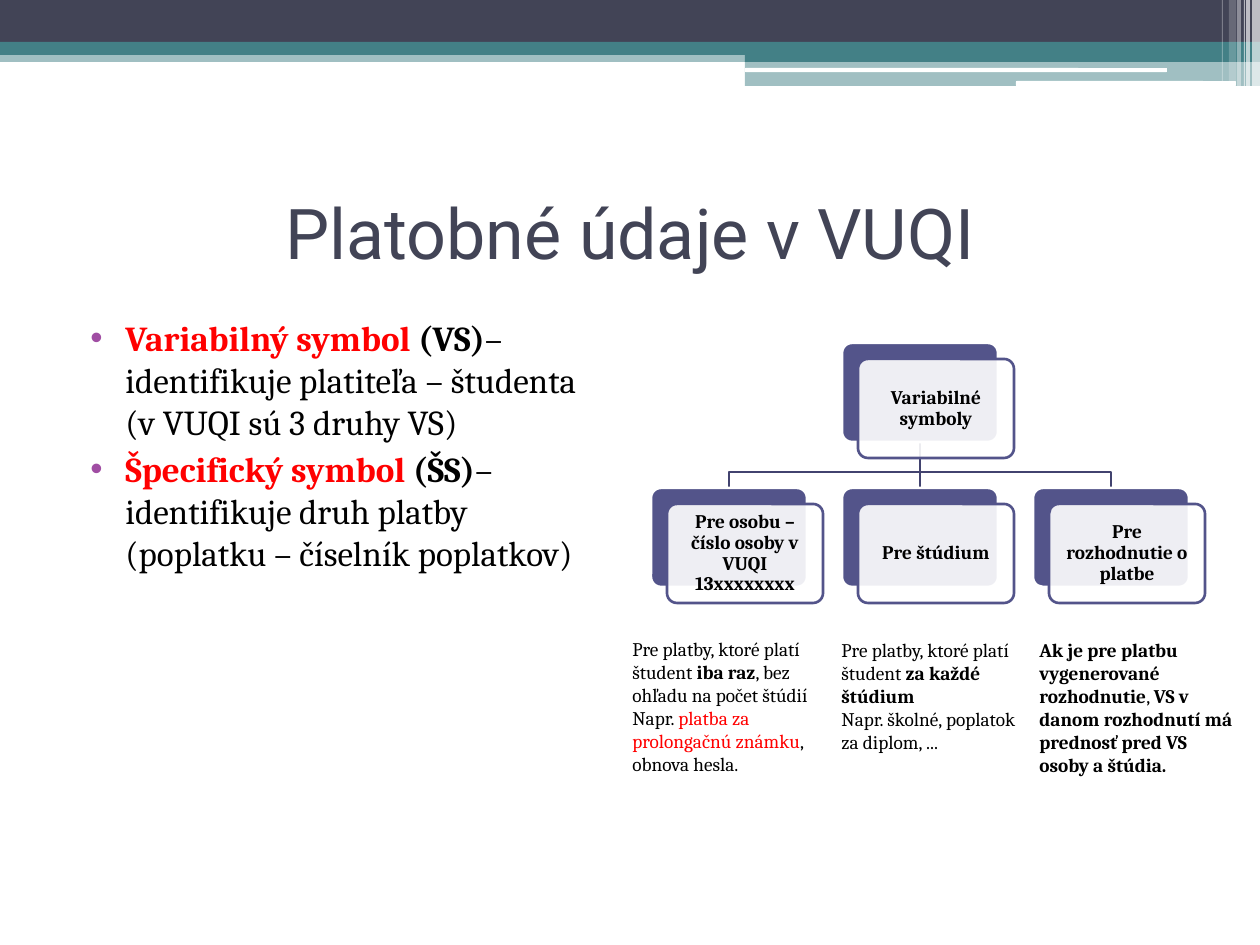
from dataclasses import dataclass

from lxml.etree import SubElement
from pptx import Presentation
from pptx.dml.color import RGBColor
from pptx.enum.shapes import MSO_CONNECTOR as Link, MSO_SHAPE as Kind
from pptx.enum.text import MSO_ANCHOR as Anchor, PP_ALIGN as Align
from pptx.oxml.ns import qn
from pptx.util import Emu, Pt

INK = {"navy": "424456", "teal": "438086", "white": "FFFFFF", "black": "000000",
       "red": "FF0000", "card": "53548A", "link": "42436F", "dot": "A04DA3"}
SERIF = "Cambria"


@dataclass
class Run:
    text: str
    bold: bool = False
    ink: str = "black"


@dataclass
class Band:
    x: int
    y: int
    w: int
    h: int
    ink: str = "white"
    alpha: int = 100
    kind: Kind = Kind.RECTANGLE


@dataclass
class Note:
    x: int
    y: int
    h: int
    paras: list[list[Run]]


def px(n: int) -> Emu:
    return Emu(round(n * 914400 / 126))


def rgb(ink: str) -> RGBColor:
    return RGBColor.from_string(INK[ink])


def draw(tree, band: Band, line: str = ""):
    """Add a filled shape, outlined only when a line colour is given."""
    box = tree.add_shape(band.kind, *map(px, (band.x, band.y, band.w, band.h)))
    box.shadow.inherit = False
    box.fill.solid()
    box.fill.fore_color.rgb = rgb(band.ink)
    if band.alpha < 100:
        clr = box.fill._xPr.find(".//" + qn("a:srgbClr"))
        SubElement(clr, qn("a:alpha"), val=str(band.alpha * 1000))
    if line:
        stroke(box, line)
    else:
        box.line.fill.background()
    return box


def stroke(item, ink: str) -> None:
    item.line.color.rgb = rgb(ink)
    item.line.width = Pt(1.5)


def write(para, runs: list[Run], size: int, font: str = SERIF) -> None:
    for part in runs:
        run = para.add_run()
        run.text = part.text
        run.font.size = Pt(size)
        run.font.name = font
        run.font.bold = part.bold
        run.font.color.rgb = rgb(part.ink)


def bullet(para) -> None:
    ppr = para._p.get_or_add_pPr()
    ppr.set("marL", str(px(50)))
    ppr.set("indent", str(-px(35)))
    tint = SubElement(ppr, qn("a:buClr"))
    SubElement(tint, qn("a:srgbClr"), val=INK["dot"])
    SubElement(ppr, qn("a:buFont"), typeface="Arial")
    SubElement(ppr, qn("a:buChar"), char="•")


def block(tree, x: int, y: int, w: int, h: int, paras: list[list[Run]],
          size: int, dots: bool = False) -> None:
    frame = tree.add_textbox(*map(px, (x, y, w, h))).text_frame
    frame.word_wrap = True
    for i, runs in enumerate(paras):
        para = frame.add_paragraph() if i else frame.paragraphs[0]
        if dots:
            para.space_before = Pt(3)
            bullet(para)
        write(para, runs, size)


CARD_W, CARD_H = 156, 99
ROOT_X, ROOT_Y, KID_Y = 842, 343, 488
STEP, BEND_Y = 191, 472


def card(tree, x: int, y: int, text: str):
    """Draw a solid card with a labelled one over it; return the solid one."""
    back = draw(tree, Band(x, y, CARD_W, CARD_H, "card", 100, Kind.ROUNDED_RECTANGLE), "white")
    front = draw(tree, Band(x + 16, y + 16, CARD_W, CARD_H, "white", 90,
                            Kind.ROUNDED_RECTANGLE), "card")
    for box in (back, front):
        box.adjustments[0] = 0.1
    frame = front.text_frame
    frame.word_wrap = True
    frame.vertical_anchor = Anchor.MIDDLE
    frame.margin_left = frame.margin_right = px(6)
    frame.margin_top = frame.margin_bottom = px(6)
    para = frame.paragraphs[0]
    para.alignment = Align.CENTER
    para.line_spacing = 0.9
    write(para, [Run(text, True)], 11)
    return back


def elbow(tree, kid_x: int) -> None:
    mid, end = ROOT_X + CARD_W // 2, kid_x + CARD_W // 2
    pen = tree.build_freeform(px(mid), px(ROOT_Y + CARD_H))
    pen.add_line_segments([(px(mid), px(BEND_Y)), (px(end), px(BEND_Y)),
                           (px(end), px(KID_Y))], close=False)
    path = pen.convert_to_shape()
    path.shadow.inherit = False
    path.fill.background()
    stroke(path, "link")


def chart(tree, root: str, kids: list[str]) -> None:
    spots = [ROOT_X + (i - 1) * STEP for i in range(len(kids))]
    elbow(tree, spots[0])
    elbow(tree, spots[-1])
    mid = px(ROOT_X + CARD_W // 2)
    stem = tree.add_connector(Link.STRAIGHT, mid, px(ROOT_Y + CARD_H), mid, px(KID_Y))
    stroke(stem, "link")
    SubElement(stem._element.spPr, qn("a:effectLst"))
    top = card(tree, ROOT_X, ROOT_Y, root)
    backs = [card(tree, x, KID_Y, text) for x, text in zip(spots, kids)]
    stem.begin_connect(top, 2)
    stem.end_connect(backs[1], 0)


ROUND = Kind.ROUNDED_RECTANGLE
BANDS = [
    Band(0, 50, 1260, 12, "teal", 50),
    Band(0, 0, 1260, 42, "navy"),
    Band(0, 42, 1260, 13, "teal"),
    Band(745, 49, 515, 13, "teal"),
    Band(745, 61, 515, 25, "teal", 50),
    Band(745, 68, 422, 4, kind=ROUND),
    Band(1016, 81, 220, 5, kind=ROUND),
    Band(1252, 0, 8, 86, alpha=65),
    Band(1246, 0, 4, 86, alpha=65),
    Band(1244, 0, 1, 86, alpha=60),
    Band(1237, 0, 4, 86, alpha=40),
    Band(1229, 0, 7, 81, alpha=20),
    Band(1222, 0, 1, 81, alpha=30),
]
POINTS = [
    [Run("Variabilný symbol ", True, "red"), Run("(VS)", True),
     Run("– identifikuje platiteľa – študenta (v VUQI sú 3 druhy VS)")],
    [Run("Špecifický symbol ", True, "red"), Run("(ŠS)", True),
     Run("– identifikuje druh platby (poplatku – číselník poplatkov)")],
]
KIDS = ["Pre osobu – číslo osoby v VUQI 13xxxxxxxx", "Pre štúdium",
        "Pre rozhodnutie o platbe"]
LEAD = Run("Pre platby, ktoré platí študent ")
NOTES = [
    Note(620, 631, 190, [
        [LEAD, Run("iba raz", True), Run(", bez ohľadu na počet štúdií")],
        [Run("Napr. "), Run("platba za prolongačnú známku", ink="red"),
         Run(", obnova hesla.")]]),
    Note(829, 632, 168, [
        [LEAD, Run("za každé štúdium", True)],
        [Run("Napr. školné, poplatok za diplom, ...")]]),
    Note(1027, 632, 190, [
        [Run("Ak je pre platbu vygenerované rozhodnutie", True), Run(", "),
         Run("VS v danom rozhodnutí má prednosť pred VS osoby a štúdia.", True)]]),
]


def main() -> None:
    deck = Presentation()
    deck.slide_width, deck.slide_height = px(1260), px(945)
    slide = deck.slides.add_slide(deck.slide_layouts[5])
    tree = slide.shapes
    for band in BANDS:
        draw(tree, band)
    title = tree.title
    title.left, title.top, title.width, title.height = map(px, (63, 158, 1134, 147))
    title.text_frame.vertical_anchor = Anchor.MIDDLE
    para = title.text_frame.paragraphs[0]
    para.alignment = Align.CENTER
    write(para, [Run("Platobné údaje v VUQI", ink="navy")], 40, "Roboto")
    block(tree, 63, 310, 557, 440, POINTS, 20, True)
    chart(tree, "Variabilné symboly", KIDS)
    for note in NOTES:
        block(tree, note.x, note.y, 218, note.h, note.paras, 11)
    deck.save("out.pptx")


if __name__ == "__main__":
    main()
